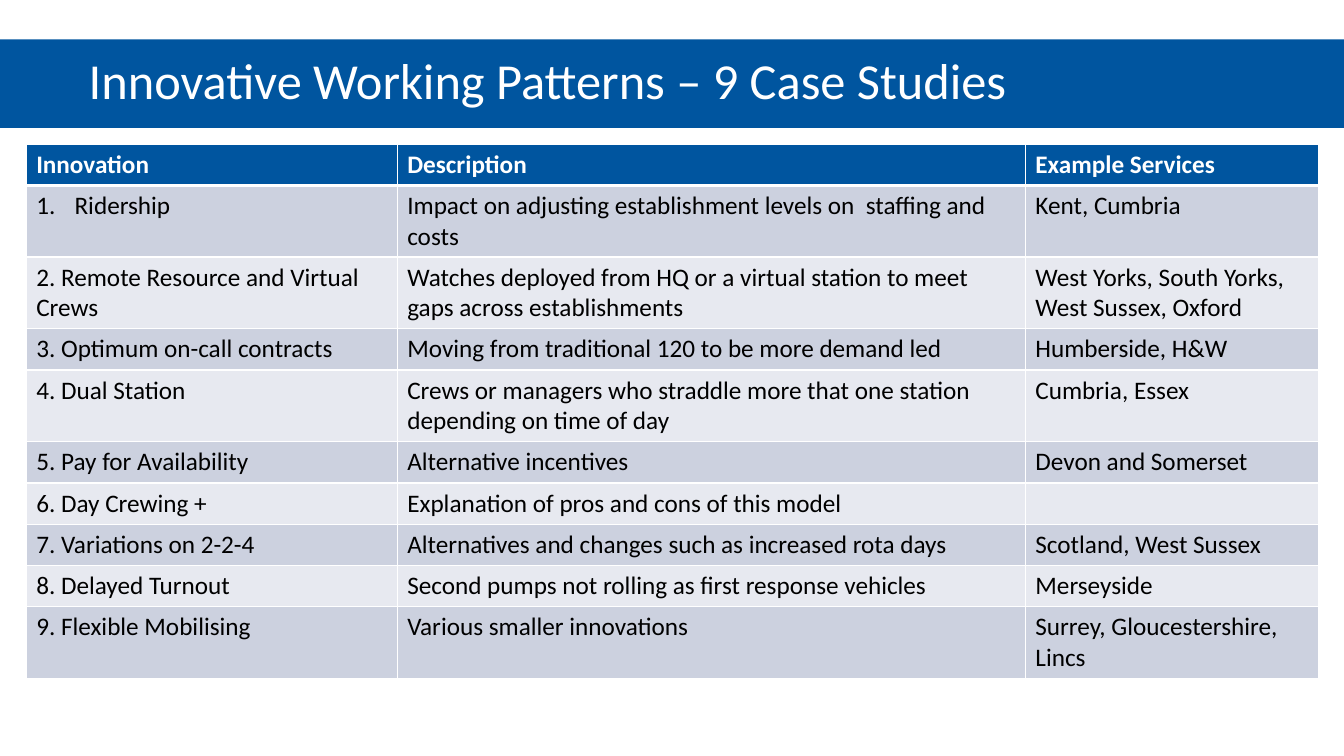
import pptx
import pptx.dml.color
import pptx.enum.text
import pptx.oxml
import pptx.oxml.ns
import pptx.util

WIDTH, HEIGHT = 13.33, 7.5
FONT = "Calibri"
BLUE, WHITE, BLACK = "00559F", "FFFFFF", "000000"
BANDS = ("CCD1DF", "E7E9F0")
COLUMN_WIDTHS = (3.68, 6.23, 2.91)
ROW_HEIGHT = 0.41
CASE_STUDIES = (
    ("Innovation", "Description", "Example Services"),
    ("Ridership", "Impact on adjusting establishment levels on  staffing and costs", "Kent, Cumbria"),
    ("2. Remote Resource and Virtual Crews",
     "Watches deployed from HQ or a virtual station to meet gaps across establishments",
     "West Yorks, South Yorks, West Sussex, Oxford"),
    ("3. Optimum on-call contracts", "Moving from traditional 120 to be more demand led", "Humberside, H&W"),
    ("4. Dual Station", "Crews or managers who straddle more that one station depending on time of day",
     "Cumbria, Essex"),
    ("5. Pay for Availability", "Alternative incentives", "Devon and Somerset"),
    ("6. Day Crewing +", "Explanation of pros and cons of this model", ""),
    ("7. Variations on 2-2-4", "Alternatives and changes such as increased rota days", "Scotland, West Sussex"),
    ("8. Delayed Turnout", "Second pumps not rolling as first response vehicles", "Merseyside"),
    ("9. Flexible Mobilising", "Various smaller innovations", "Surrey, Gloucestershire, Lincs"),
)


def inches(value):
    return pptx.util.Inches(value)


def paint(colour_holder, colour):
    colour_holder.rgb = pptx.dml.color.RGBColor.from_string(colour)


def fill_solid(element, colour):
    element.fill.solid()
    paint(element.fill.fore_color, colour)


def format_spans(para, size, colour, bold=False):
    for span in para.runs:
        span.font.name = FONT
        span.font.size = pptx.util.Pt(size)
        span.font.bold = bold
        paint(span.font.color, colour)


def indent(para, left, first=0):
    properties = para._p.get_or_add_pPr()
    properties.set("marL", str(inches(left)))
    properties.set("indent", str(inches(first)))
    return properties


def number(para):
    properties = indent(para, 0.38, -0.38)
    properties.append(pptx.oxml.parse_xml(
        f'<a:buAutoNum {pptx.oxml.ns.nsdecls("a")} type="arabicPeriod"/>'))


def add_border(cell, side, points):
    cell._tc.get_or_add_tcPr().append(pptx.oxml.parse_xml(
        f'<a:ln{side} {pptx.oxml.ns.nsdecls("a")} w="{pptx.util.Pt(points)}">'
        f'<a:solidFill><a:srgbClr val="{WHITE}"/></a:solidFill></a:ln{side}>'))


def add_title(page, text):
    title = page.shapes.title
    title.left, title.top = 0, inches(0.39)
    title.width, title.height = inches(WIDTH), inches(0.88)
    fill_solid(title, BLUE)
    frame = title.text_frame
    frame.text = text
    frame.word_wrap = True
    frame.auto_size = pptx.enum.text.MSO_AUTO_SIZE.NONE
    frame.vertical_anchor = pptx.enum.text.MSO_ANCHOR.MIDDLE
    para = frame.paragraphs[0]
    indent(para, 0.78)
    para.alignment = pptx.enum.text.PP_ALIGN.LEFT
    para.line_spacing = 0.9
    format_spans(para, 36, WHITE)


def fill_cell(cell, text, row):
    header = row == 0
    for side, points in (("L", 1), ("R", 1), ("T", 3 if row == 1 else 1), ("B", 3 if header else 1)):
        add_border(cell, side, points)
    fill_solid(cell, BLUE if header else BANDS[(row - 1) % 2])
    cell.text_frame.text = text
    format_spans(cell.text_frame.paragraphs[0], 18, WHITE if header else BLACK, header)


def add_case_table(page):
    frame = page.shapes.add_table(
        len(CASE_STUDIES), len(COLUMN_WIDTHS), inches(0.26), inches(1.43),
        inches(sum(COLUMN_WIDTHS)), inches(ROW_HEIGHT * len(CASE_STUDIES)))
    table = frame.table
    for column, width in zip(table.columns, COLUMN_WIDTHS):
        column.width = inches(width)
    for row, texts in enumerate(CASE_STUDIES):
        for column, text in enumerate(texts):
            fill_cell(table.cell(row, column), text, row)
    number(table.cell(1, 0).text_frame.paragraphs[0])
    frame.height = inches(5.23)


def main():
    deck = pptx.Presentation()
    deck.slide_width, deck.slide_height = inches(WIDTH), inches(HEIGHT)
    page = deck.slides.add_slide(deck.slide_layouts[5])
    add_title(page, "Innovative Working Patterns – 9 Case Studies")
    add_case_table(page)
    deck.save("out.pptx")


if __name__ == "__main__":
    main()
